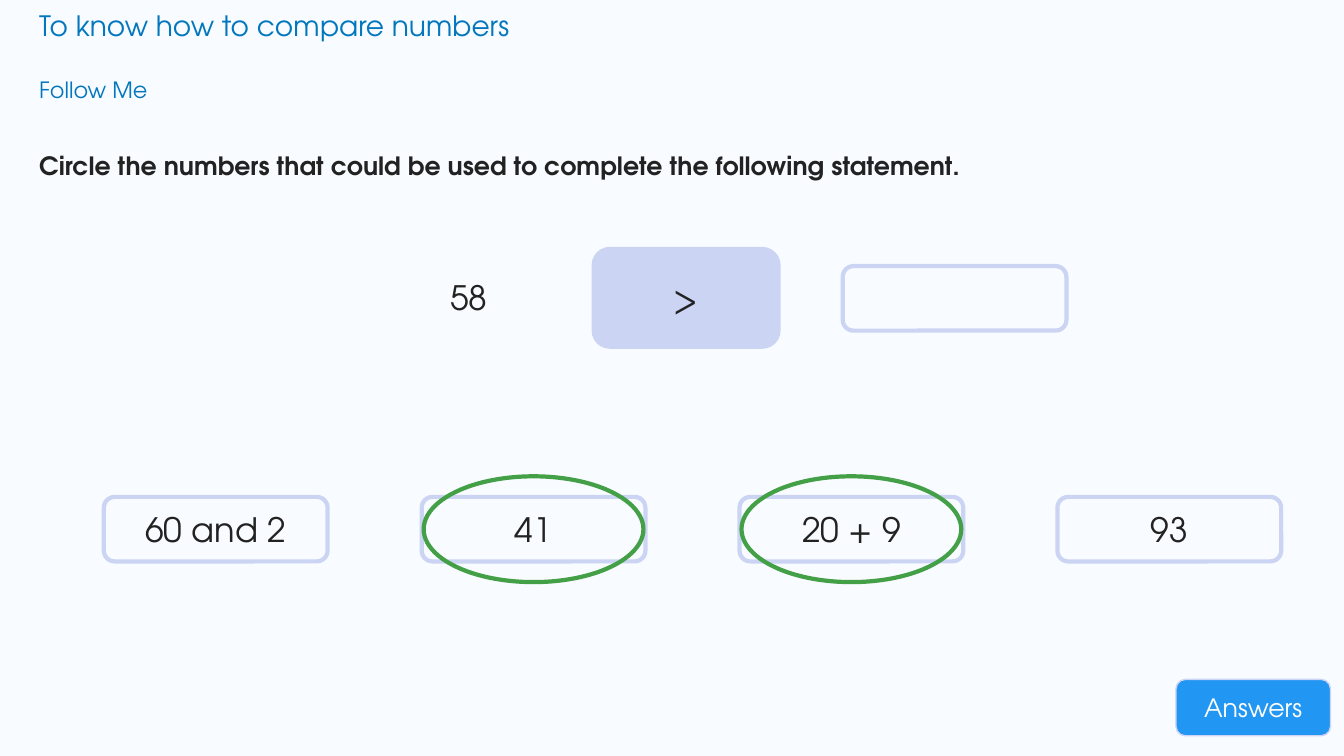
from dataclasses import dataclass

from pptx import Presentation
from pptx.dml.color import RGBColor
from pptx.enum.shapes import MSO_SHAPE
from pptx.enum.text import MSO_ANCHOR, PP_ALIGN
from pptx.util import Inches, Pt

ROUNDED = MSO_SHAPE.ROUNDED_RECTANGLE
OVAL = MSO_SHAPE.OVAL
MIDDLE, TOP = MSO_ANCHOR.MIDDLE, MSO_ANCHOR.TOP
CENTER, LEFT = PP_ALIGN.CENTER, PP_ALIGN.LEFT

FONT = "TeX Gyre Adventor"
BACKGROUND, HEADING, INK = "F8FBFF", "0277BD", "222222"
LAVENDER, BUTTON, GREEN, WHITE = "CCD4F4", "2196F3", "43A047", "FFFFFF"

SLIDE_WIDTH, SLIDE_HEIGHT = Inches(13.33), Inches(7.5)
COLUMNS, ROWS = 40, 30

MARGIN = 0.87
CARD_WIDTH, CARD_HEIGHT = 6.66, 2.56
CARD_LEFT, CARD_TOP, CARD_STEP = 3.09, 19.72, 9.46
RING_WIDTH, RING_HEIGHT = 6.54, 4.2


@dataclass(frozen=True)
class Area:
    """A rectangle in grid columns and rows."""
    left: float
    top: float
    width: float
    height: float

    def emu(self) -> tuple[int, int, int, int]:
        column, row = SLIDE_WIDTH / COLUMNS, SLIDE_HEIGHT / ROWS
        return (round(self.left * column), round(self.top * row),
                round(self.width * column), round(self.height * row))


@dataclass(frozen=True)
class Heading:
    text: str
    area: Area
    size: int
    color: str = HEADING
    bold: bool = False
    line_spacing: float = 1.0


@dataclass(frozen=True)
class Box:
    text: str
    area: Area
    fill: str | None = None
    line: str | None = LAVENDER
    line_width: int = 3
    size: int = 24
    color: str = INK


@dataclass(frozen=True)
class Choice:
    text: str
    circled: bool


HEADINGS = [
    Heading("To know how to compare numbers", Area(MARGIN, 0.16, 37, 1.76), 20),
    Heading("Follow Me", Area(MARGIN, 2.84, 8.9, 1.84), 16),
    Heading("Circle the numbers that could be used to complete the following statement.",
            Area(MARGIN, 5.16, 38.5, 2.72), 18, INK, True, 1.5),
]
BOXES = [
    Box("Answers", Area(35, 26.96, 4.6, 2.24), BUTTON, line_width=1, size=18, color=WHITE),
    Box(">", Area(17.67, 9.88, 5.5, 3.88), LAVENDER),
    Box("58", Area(12.15, 10.52, 3.6, CARD_HEIGHT), line=None),
    Box("", Area(25.08, 10.56, CARD_WIDTH, CARD_HEIGHT)),
]
CHOICES = [Choice("60 and 2", False), Choice("41", True),
           Choice("20 + 9", True), Choice("93", False)]


def rgb(color: str) -> RGBColor:
    return RGBColor.from_string(color)


def write_text(shape, text: str, *, size: int, color: str, bold: bool = False,
               align=CENTER, anchor=MIDDLE, line_spacing: float = 1.0) -> None:
    frame = shape.text_frame
    frame.word_wrap = True
    frame.vertical_anchor = anchor
    paragraph = frame.paragraphs[0]
    paragraph.alignment = align
    paragraph.line_spacing = line_spacing
    run = paragraph.add_run()
    run.text = text
    run.font.name = FONT
    run.font.size = Pt(size)
    run.font.bold = bold
    run.font.color.rgb = rgb(color)


def draw_outline(slide, kind, area: Area, fill: str | None, line: str | None, line_width: int):
    shape = slide.shapes.add_shape(kind, *area.emu())
    shape.shadow.inherit = False
    if fill:
        shape.fill.solid()
        shape.fill.fore_color.rgb = rgb(fill)
    else:
        shape.fill.background()
    if line:
        shape.line.color.rgb = rgb(line)
        shape.line.width = Pt(line_width)
    else:
        shape.line.fill.background()
    return shape


def draw_heading(slide, heading: Heading) -> None:
    text_box = slide.shapes.add_textbox(*heading.area.emu())
    write_text(text_box, heading.text, size=heading.size, color=heading.color,
               bold=heading.bold, align=LEFT, anchor=TOP, line_spacing=heading.line_spacing)


def draw_box(slide, box: Box) -> None:
    shape = draw_outline(slide, ROUNDED, box.area, box.fill, box.line, box.line_width)
    if box.text:
        write_text(shape, box.text, size=box.size, color=box.color)


def draw_ring(slide, card: Area) -> None:
    """Circle a card with an ellipse that shares its centre."""
    ring = Area(card.left + (card.width - RING_WIDTH) / 2,
                card.top + (card.height - RING_HEIGHT) / 2, RING_WIDTH, RING_HEIGHT)
    draw_outline(slide, OVAL, ring, None, GREEN, 3)


def main() -> None:
    presentation = Presentation()
    presentation.slide_width, presentation.slide_height = SLIDE_WIDTH, SLIDE_HEIGHT
    slide = presentation.slides.add_slide(presentation.slide_layouts[6])
    slide.background.fill.solid()
    slide.background.fill.fore_color.rgb = rgb(BACKGROUND)

    for heading in HEADINGS:
        draw_heading(slide, heading)
    for box in BOXES:
        draw_box(slide, box)

    cards = [Area(CARD_LEFT + index * CARD_STEP, CARD_TOP, CARD_WIDTH, CARD_HEIGHT)
             for index in range(len(CHOICES))]
    for choice, card in zip(CHOICES, cards):
        draw_box(slide, Box(choice.text, card))
    for choice, card in zip(CHOICES, cards):
        if choice.circled:
            draw_ring(slide, card)

    presentation.save("out.pptx")


if __name__ == "__main__":
    main()
